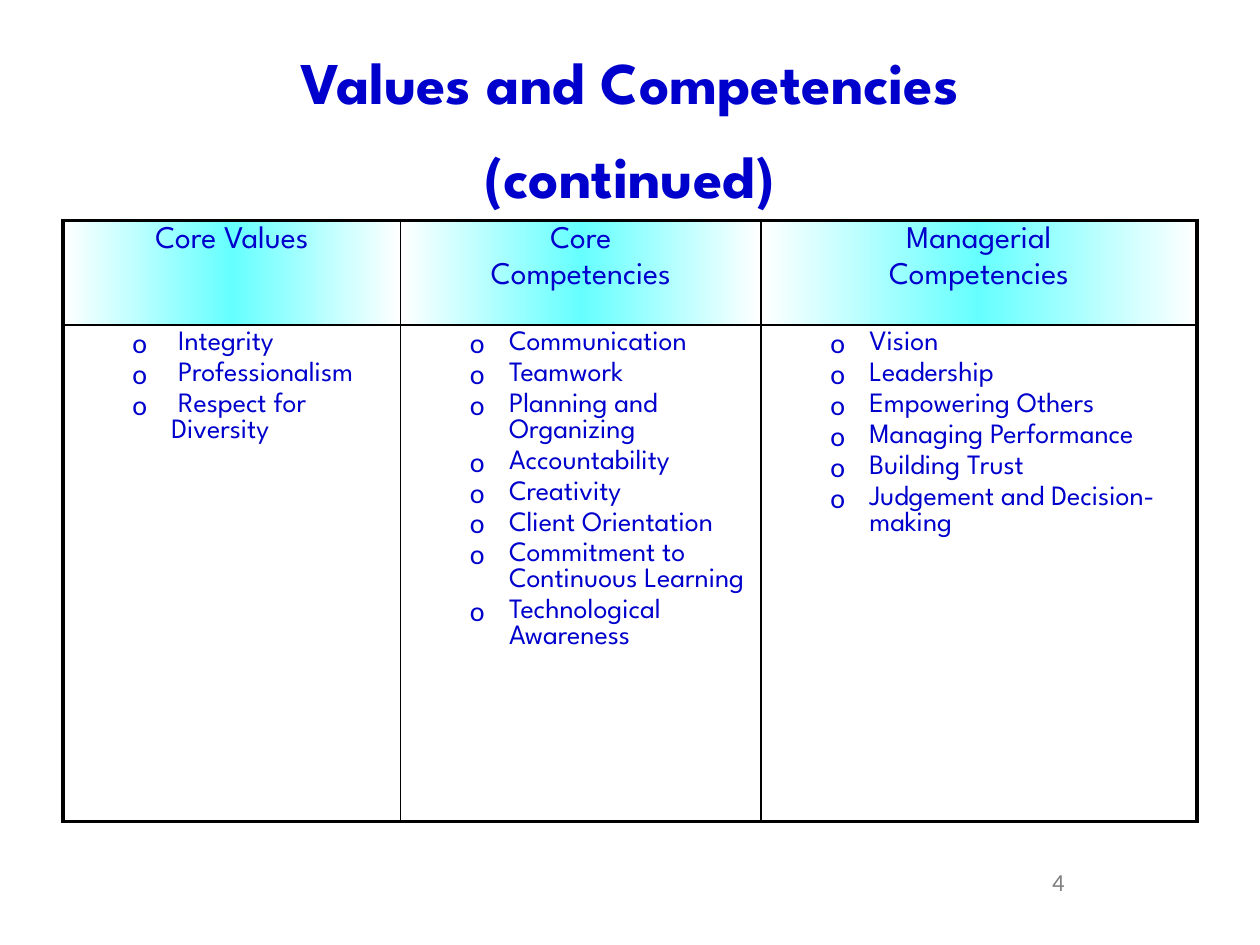
from pptx import Presentation
from pptx.dml.color import RGBColor
from pptx.enum.text import MSO_ANCHOR, MSO_AUTO_SIZE, PP_ALIGN
from pptx.oxml import parse_xml
from pptx.oxml.ns import nsdecls
from pptx.util import Inches, Pt

BLUE = RGBColor(0x00, 0x00, 0xCC)
GRAY = RGBColor(0x80, 0x80, 0x80)
BLACK = RGBColor(0x00, 0x00, 0x00)
WHITE = RGBColor(0xFF, 0xFF, 0xFF)
CYAN = RGBColor(0x66, 0xFF, 0xFF)
FONT = "League Spartan"
PAD = Inches(0.05)

TITLE = "Values and Competencies\v(continued)"
PAGE = "4"
# Heading lines, list items, column width
COLUMNS = [
    (["Core Values"],
     [" Integrity", " Professionalism", " Respect for Diversity"], 2.68),
    (["Core", "Competencies"],
     ["Communication", "Teamwork", "Planning and Organizing",
      "Accountability", "Creativity", "Client Orientation",
      "Commitment to Continuous Learning", "Technological Awareness"], 2.86),
    (["Managerial", "Competencies"],
     ["Vision", "Leadership", "Empowering Others", "Managing Performance",
      "Building Trust", "Judgement and Decision-making"], 3.46),
]
ROWS = [0.83, 3.94]


def style(para, size, color=BLUE, name=FONT, bold=False):
    font = para.font
    font.size, font.name, font.bold = Pt(size), name, bold
    font.color.rgb = color


def pad(frame):
    frame.margin_left = frame.margin_right = PAD
    frame.margin_top = frame.margin_bottom = PAD


def add_bullet(para):
    props = para._p.get_or_add_pPr()
    props.set("marL", str(Inches(0.81)))
    props.set("indent", str(Inches(-0.31)))
    props.append(parse_xml(f'<a:buFont {nsdecls("a")} typeface="Calibri"/>'))
    props.append(parse_xml(f'<a:buChar {nsdecls("a")} char="o"/>'))


def add_borders(cell, row, col):
    """Draw thick lines on the table's outer edge, thin ones inside."""
    outer = {"L": col == 0, "R": col == len(COLUMNS) - 1,
             "T": row == 0, "B": row == len(ROWS) - 1}
    props = cell._tc.get_or_add_tcPr()
    for side, thick in outer.items():
        width = Pt(2.25 if thick else 1)
        props.append(parse_xml(
            f'<a:ln{side} {nsdecls("a")} w="{width}"><a:solidFill>'
            f'<a:srgbClr val="{BLACK}"/></a:solidFill></a:ln{side}>'))


def add_gradient(cell):
    stops = "".join(
        f'<a:gs pos="{pos}"><a:srgbClr val="{color}"/></a:gs>'
        for pos, color in [(0, WHITE), (50000, CYAN), (100000, WHITE)])
    cell._tc.get_or_add_tcPr().append(parse_xml(
        f'<a:gradFill {nsdecls("a")}><a:gsLst>{stops}</a:gsLst>'
        '<a:lin ang="10800000" scaled="0"/></a:gradFill>'))


def fill_cell(cell, lines, head):
    pad(cell)
    frame = cell.text_frame
    frame.text = "\n".join(lines)
    for i, para in enumerate(frame.paragraphs):
        if head:
            para.alignment = PP_ALIGN.CENTER
        else:
            para.level = 1
            add_bullet(para)
        para.space_before = Pt((4 if head else 3) if i else 0)
        style(para, 18 if head else 16)


def add_title(slide):
    title = slide.shapes.title
    title.left, title.top = Inches(0.5), Inches(0.3)
    title.width, title.height = Inches(9), Inches(1.25)
    frame = title.text_frame
    pad(frame)
    frame.auto_size = MSO_AUTO_SIZE.NONE
    frame.vertical_anchor = MSO_ANCHOR.MIDDLE
    frame.text = TITLE
    para = frame.paragraphs[0]
    para.alignment = PP_ALIGN.CENTER
    para.line_spacing = 1.32
    style(para, 33.8, bold=True)


def add_grid(slide):
    table = slide.shapes.add_table(
        len(ROWS), len(COLUMNS), Inches(0.5), Inches(1.75),
        Inches(9), Inches(sum(ROWS))).table
    table.first_row = table.horz_banding = False
    for row, height in zip(table.rows, ROWS):
        row.height = Inches(height)
    for col, (head, items, width) in enumerate(COLUMNS):
        table.columns[col].width = Inches(width)
        for row, lines in enumerate([head, items]):
            cell = table.cell(row, col)
            fill_cell(cell, lines, head=row == 0)
            add_borders(cell, row, col)
            if row == 0:
                add_gradient(cell)
            else:
                cell.fill.background()


def add_page(slide):
    frame = slide.shapes.add_textbox(
        Inches(8.29), Inches(6.83), Inches(0.21), Inches(0.34)).text_frame
    pad(frame)
    frame.word_wrap = False
    frame.auto_size = MSO_AUTO_SIZE.SHAPE_TO_FIT_TEXT
    frame.text = PAGE
    para = frame.paragraphs[0]
    para.alignment = PP_ALIGN.RIGHT
    style(para, 14, GRAY, "Calibri")


def main():
    deck = Presentation()
    deck.slide_width, deck.slide_height = Inches(10), Inches(7.5)
    slide = deck.slides.add_slide(deck.slide_layouts[5])
    add_title(slide)
    add_grid(slide)
    add_page(slide)
    deck.save("out.pptx")


if __name__ == "__main__":
    main()
